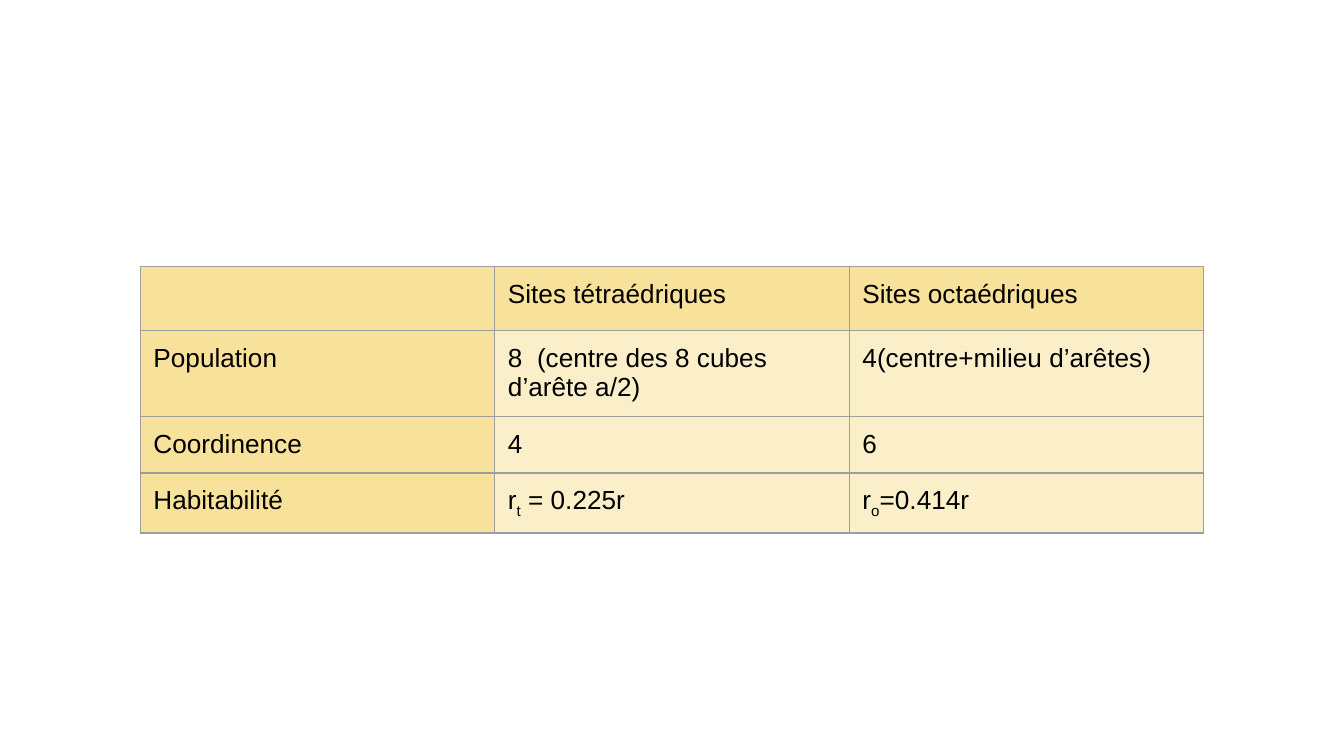
import dataclasses

import lxml.etree
import pptx
import pptx.dml.color
import pptx.oxml.ns
import pptx.util
from pptx.util import Cm


@dataclasses.dataclass(frozen=True)
class Theme:
    font: str = "Arial"
    size: int = 14
    text: str = "000000"
    accent: str = "F1C232"
    border: str = "9E9E9E"
    border_width: float = 0.75
    header_alpha: int = 49
    body_alpha: int = 26


THEME = Theme()
SUBSCRIPT = "-25000"
ROW_HEIGHTS = (1.21, 1.63, 1.07, 1.13)
COLUMN_WIDTH = 6.7
ROWS = (
    ("", "Sites tétraédriques", "Sites octaédriques"),
    ("Population", "8  (centre des 8 cubes d’arête a/2)", "4(centre+milieu d’arêtes)"),
    ("Coordinence", "4", "6"),
    ("Habitabilité", ("r", "t", " = 0.225r"), ("r", "o", "=0.414r")),
)


def rgb(value):
    return pptx.dml.color.RGBColor.from_string(value)


def add_child(parent, tag, **attributes):
    return lxml.etree.SubElement(parent, pptx.oxml.ns.qn(tag), **attributes)


def set_borders(cell):
    tcPr = cell._tc.get_or_add_tcPr()
    width = str(pptx.util.Pt(THEME.border_width))
    for tag in ("a:lnL", "a:lnR", "a:lnT", "a:lnB"):
        line = add_child(tcPr, tag, w=width)
        add_child(add_child(line, "a:solidFill"), "a:srgbClr", val=THEME.border)


def set_fill(cell, alpha):
    cell.fill.solid()
    cell.fill.fore_color.rgb = rgb(THEME.accent)
    color = cell._tc.tcPr.find(pptx.oxml.ns.qn("a:solidFill"))[0]
    add_child(color, "a:alpha", val=str(alpha * 1000))


def set_text(cell, content):
    cell.margin_left = cell.margin_right = Cm(0.25)
    cell.margin_top = cell.margin_bottom = Cm(0.25)
    p = cell.text_frame.paragraphs[0]
    p.font.name = THEME.font
    p.font.size = pptx.util.Pt(THEME.size)
    p.font.bold = False
    p.font.color.rgb = rgb(THEME.text)
    if isinstance(content, str):
        content = (content,) if content else ()
    for i, text in enumerate(content):
        r = p.add_run()
        r.text = text
        if i == 1:
            r._r.get_or_add_rPr().set("baseline", SUBSCRIPT)


def add_sites_table(s):
    columns = len(ROWS[0])
    frame = s.shapes.add_table(
        len(ROWS), columns, Cm(2.65), Cm(5.03),
        Cm(COLUMN_WIDTH * columns), Cm(sum(ROW_HEIGHTS)))
    table = frame.table
    table.first_row = table.horz_banding = False
    for column in table.columns:
        column.width = Cm(COLUMN_WIDTH)
    for i, (height, contents) in enumerate(zip(ROW_HEIGHTS, ROWS)):
        table.rows[i].height = Cm(height)
        for j, content in enumerate(contents):
            cell = table.cell(i, j)
            is_header = i == 0 or j == 0
            set_borders(cell)
            set_fill(cell, THEME.header_alpha if is_header else THEME.body_alpha)
            set_text(cell, content)


def main():
    prs = pptx.Presentation()
    prs.slide_width, prs.slide_height = Cm(25.4), Cm(14.29)
    s = prs.slides.add_slide(prs.slide_layouts[6])
    add_sites_table(s)
    prs.save("out.pptx")


if __name__ == "__main__":
    main()
